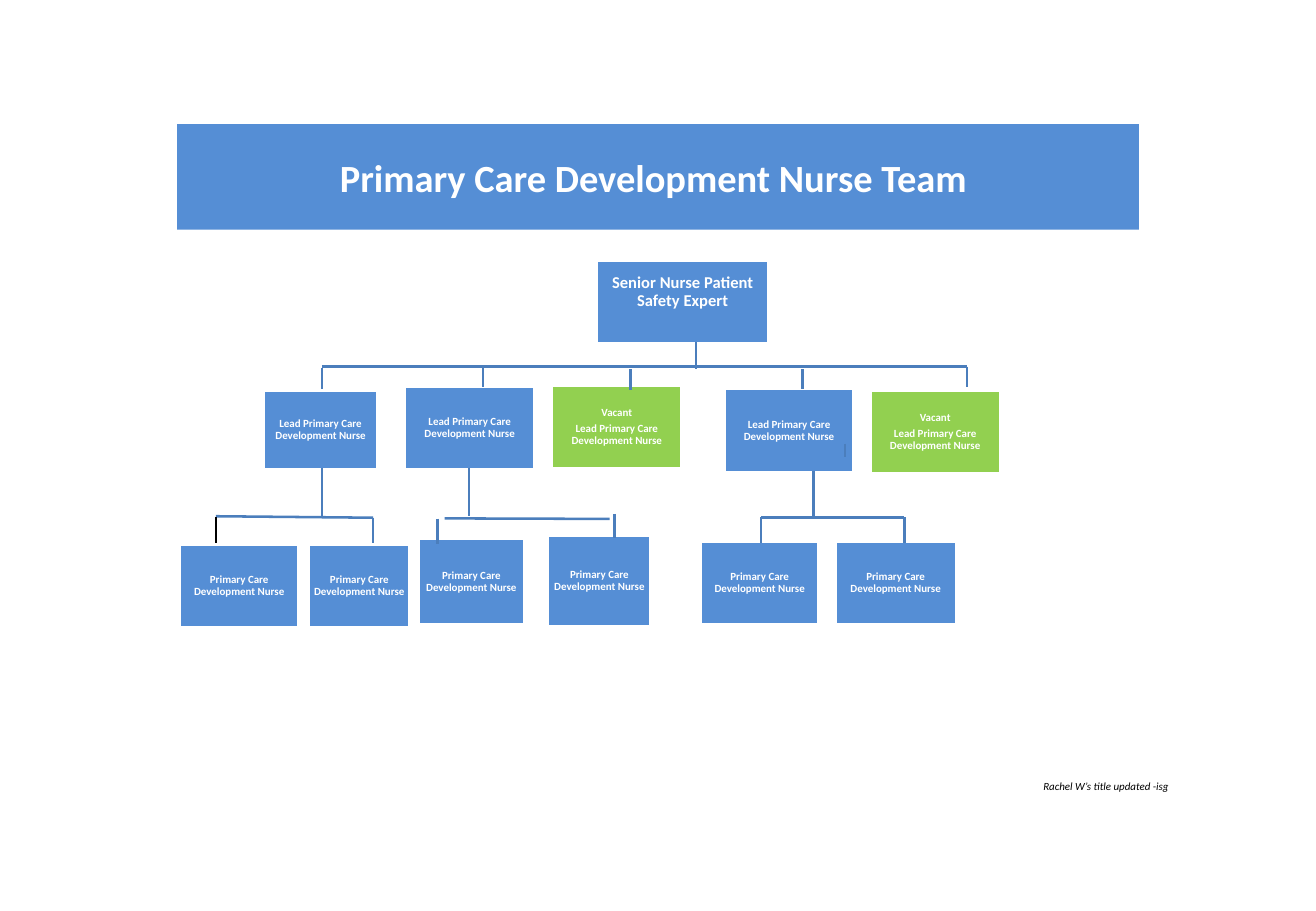
from lxml.etree import SubElement
from pptx import Presentation
from pptx.dml.color import RGBColor
from pptx.enum.shapes import MSO_CONNECTOR, MSO_SHAPE
from pptx.enum.text import MSO_ANCHOR, MSO_AUTO_SIZE, PP_ALIGN
from pptx.oxml.ns import qn
from pptx.util import Pt

BLUE = RGBColor(0x55, 0x8E, 0xD5)
GREEN = RGBColor(0x92, 0xD0, 0x50)
STEEL = RGBColor(0x4B, 0x7E, 0xBC)
WHITE = RGBColor(255, 255, 255)
BLACK = RGBColor(0, 0, 0)


def add_run(para, text, size, color):
    run = para.add_run()
    run.text = text
    run.font.name = "Calibri"
    run.font.size = Pt(size)
    run.font.color.rgb = color
    return run


def add_box(x, y, w, h, fill, lines, size, after=0):
    box = slide.shapes.add_shape(MSO_SHAPE.RECTANGLE, Pt(x), Pt(y), Pt(w), Pt(h))
    box.shadow.inherit = False
    box.fill.solid()
    box.fill.fore_color.rgb = fill
    box.line.color.rgb = WHITE
    box.line.width = Pt(2)
    frame = box.text_frame
    frame.word_wrap = True
    frame.vertical_anchor = MSO_ANCHOR.MIDDLE
    frame.margin_left = frame.margin_right = frame.margin_top = frame.margin_bottom = 0
    for i, line in enumerate(lines):
        para = frame.add_paragraph() if i else frame.paragraphs[0]
        para.alignment = PP_ALIGN.CENTER
        para.line_spacing = 0.9
        para.space_after = Pt(after)
        add_run(para, line, size, WHITE).font.bold = True
    return box


deck = Presentation()
deck.slide_width, deck.slide_height = Pt(780), Pt(540)
slide = deck.slides.add_slide(deck.slide_layouts[5])

# Title band
title = slide.shapes.title
title.left, title.top, title.width, title.height = Pt(105), Pt(73.5), Pt(570), Pt(62.7)
title.fill.solid()
title.fill.fore_color.rgb = BLUE
frame = title.text_frame
frame.auto_size = MSO_AUTO_SIZE.NONE
frame.word_wrap = True
frame.vertical_anchor = MSO_ANCHOR.MIDDLE
para = frame.paragraphs[0]
para.alignment = PP_ALIGN.CENTER
add_run(para, "Primary Care Development Nurse Team ", 22.8, WHITE).font.bold = True

# Senior nurse, with the text raised above the middle
senior = add_box(353.5, 154, 102.2, 49.7, BLUE, ["Senior Nurse Patient Safety Expert"], 9.8)
senior.text_frame.margin_bottom = Pt(11)

# Lead nurses: left, top, width, height, vacant
leads = [
    (156.2, 231.1, 67.7, 47.5, False),
    (239.8, 229, 77.2, 49.7, False),
    (327, 228.4, 77.2, 49.7, True),
    (429.1, 230.4, 77.2, 49.7, False),
    (515.7, 231.1, 77.2, 49.7, True),
]
for x, y, w, h, vacant in leads:
    lines = ["Lead Primary Care Development Nurse"]
    if vacant:
        lines.insert(0, "Vacant")
    add_box(x, y, w, h, GREEN if vacant else BLUE, lines, 6.5, 2.3)

# Nurses: left, top, width, height
nurses = [
    (106.5, 322.5, 70.6, 49.7),
    (182.9, 322.5, 60.2, 49.7),
    (247.9, 319.1, 63, 51.4),
    (324.6, 317.4, 61.4, 54),
    (415.3, 320.8, 70, 49.7),
    (494.9, 320.8, 72, 49.7),
]
for x, y, w, h in nurses:
    add_box(x, y, w, h, BLUE, ["Primary Care Development Nurse"], 6.5, 2.3)

# Links: from x, from y, to x, to y
links = [
    # senior nurse to leads
    (412.6, 203, 412.6, 218.9),
    (190.8, 217.4, 573.1, 217.4),
    (190.8, 218, 190.8, 230.4),
    (286.4, 217.4, 286.4, 229.4),
    (373.8, 218.9, 373.8, 231),
    (475.7, 218.9, 475.7, 230.4),
    (573.1, 217.4, 573.1, 229.4),
    (500.8, 263, 500.8, 271),
    # first lead to nurses
    (190.8, 277.2, 190.8, 306.2),
    (128, 306, 221.2, 306.9),
    (221.2, 306.9, 221.2, 321.8),
    # second lead to nurses
    (278.1, 277.2, 278.1, 306),
    (263.5, 307.3, 361.4, 307.6),
    (259.4, 307.4, 259.4, 322.3),
    (364.2, 304.6, 364.2, 319),
    # fourth lead to nurses
    (482.2, 279.4, 482.2, 306.7),
    (451.2, 306.7, 536, 306.7),
    (451.2, 306.7, 451.2, 321.8),
    (536, 306.7, 536, 321.8),
]
thin = (128, 306.7, 128, 321.8)
for ends in links + [thin]:
    link = slide.shapes.add_connector(MSO_CONNECTOR.STRAIGHT, *map(Pt, ends))
    link.line.color.rgb = BLACK if ends == thin else STEEL
    link.line.width = Pt(0.75 if ends == thin else 1.5)
    SubElement(link._element.spPr, qn("a:effectLst"))

# Note
note = slide.shapes.add_textbox(Pt(611.3), Pt(458.7), Pt(90.7), Pt(15.1))
note.text_frame.word_wrap = False
add_run(note.text_frame.paragraphs[0], "Rachel W’s title updated -isg", 6.5, BLACK).font.italic = True

deck.save("out.pptx")
